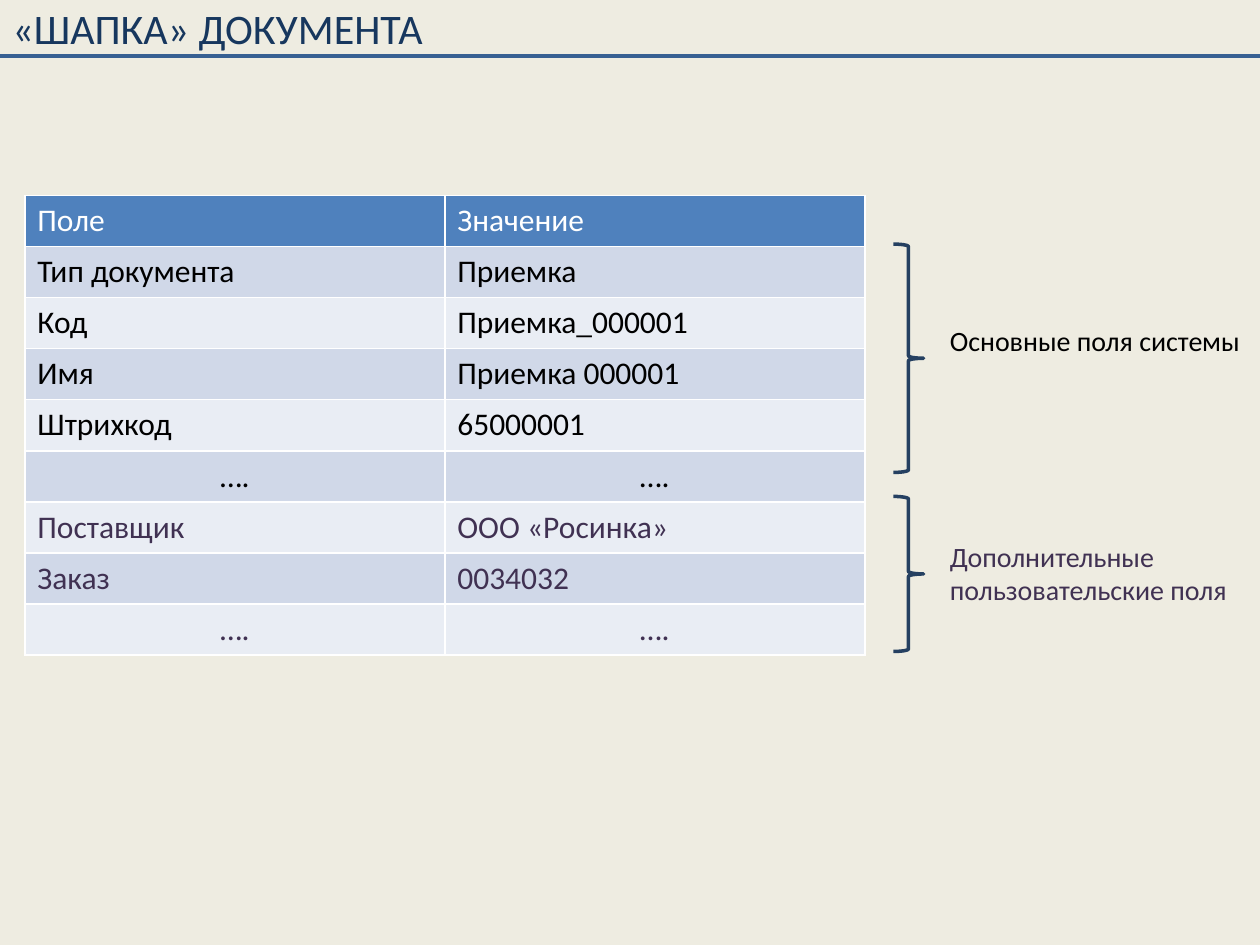
from lxml.etree import SubElement
from pptx import Presentation
from pptx.dml.color import RGBColor
from pptx.enum.shapes import MSO_CONNECTOR, MSO_SHAPE
from pptx.enum.text import PP_ALIGN
from pptx.oxml.ns import qn
from pptx.util import Pt

FONT = "Calibri"
BLACK, WHITE, PURPLE = "000000", "FFFFFF", "403152"
HEADER_FILL, BAND_FILLS = "4F81BD", ("D0D8E8", "E9EDF4")
ELLIPSIS = "…."
SYSTEM_FIELDS = [
    ("Тип документа", "Приемка"),
    ("Код", "Приемка_000001"),
    ("Имя", "Приемка 000001"),
    ("Штрихкод", "65000001"),
    (ELLIPSIS, ELLIPSIS),
]
USER_FIELDS = [
    ("Поставщик", "ООО «Росинка»"),
    ("Заказ", "0034032"),
    (ELLIPSIS, ELLIPSIS),
]


def color(value):
    return RGBColor.from_string(value)


def style_paragraph(paragraph, size, text_color):
    paragraph.font.name = FONT
    paragraph.font.size = Pt(size)
    paragraph.font.color.rgb = color(text_color)


def add_text(slide, text, left, top, width, height, size, text_color):
    box = slide.shapes.add_textbox(Pt(left), Pt(top), Pt(width), Pt(height))
    box.text_frame.word_wrap = True
    box.text_frame.text = text
    style_paragraph(box.text_frame.paragraphs[0], size, text_color)


def add_rule(slide, top, width):
    rule = slide.shapes.add_connector(
        MSO_CONNECTOR.STRAIGHT, Pt(0), Pt(top), Pt(width), Pt(top))
    rule.line.color.rgb = color("376092")
    rule.line.width = Pt(2.25)
    SubElement(rule._element.spPr, qn("a:effectLst"))


def add_brace(slide, top, height):
    brace = slide.shapes.add_shape(
        MSO_SHAPE.RIGHT_BRACE, Pt(510.5), Pt(top), Pt(17.3), Pt(height))
    brace.shadow.inherit = False
    brace.fill.background()
    brace.line.color.rgb = color("254061")
    brace.line.width = Pt(2)


def set_borders(cell, line_color, width):
    properties = cell._tc.get_or_add_tcPr()
    # Borders must precede the cell fill
    for index, side in enumerate(("lnL", "lnR", "lnT", "lnB")):
        line = SubElement(properties, qn(f"a:{side}"), w=str(Pt(width)))
        fill = SubElement(line, qn("a:solidFill"))
        SubElement(fill, qn("a:srgbClr"), val=line_color)
        properties.insert(index, line)


def fill_cell(cell, text, text_color, fill):
    cell.text = text
    paragraph = cell.text_frame.paragraphs[0]
    style_paragraph(paragraph, 18, text_color)
    if text == ELLIPSIS:
        paragraph.alignment = PP_ALIGN.CENTER
    cell.fill.solid()
    cell.fill.fore_color.rgb = color(fill)
    set_borders(cell, WHITE, 1)


def add_fields_table(slide):
    rows = [(("Поле", "Значение"), WHITE)]
    rows += [(fields, BLACK) for fields in SYSTEM_FIELDS]
    rows += [(fields, PURPLE) for fields in USER_FIELDS]
    row_height = 29.2
    table = slide.shapes.add_table(
        len(rows), 2, Pt(14.2), Pt(111.6), Pt(480), Pt(row_height * len(rows))).table
    for row_index, (texts, text_color) in enumerate(rows):
        table.rows[row_index].height = Pt(row_height)
        fill = BAND_FILLS[(row_index - 1) % 2] if row_index else HEADER_FILL
        for column_index, text in enumerate(texts):
            fill_cell(table.cell(row_index, column_index), text, text_color, fill)


def main():
    presentation = Presentation()
    presentation.slide_width, presentation.slide_height = Pt(720), Pt(540)
    slide = presentation.slides.add_slide(presentation.slide_layouts[6])
    slide.background.fill.solid()
    slide.background.fill.fore_color.rgb = color("EEECE1")

    # Title
    add_text(slide, "«ШАПКА» ДОКУМЕНТА", 0, -2, 720, 36, 24, "17375E")
    add_rule(slide, 32, 720)

    # Document fields
    add_fields_table(slide)

    # Field groups
    add_brace(slide, 139.5, 130.5)
    add_text(slide, "Основные поля системы", 535.7, 181.5, 193, 26.6, 16, BLACK)
    add_brace(slide, 283.7, 88.6)
    add_text(slide, "Дополнительные пользовательские поля",
             535.7, 304.5, 193, 46, 16, PURPLE)

    presentation.save("out.pptx")


main()
